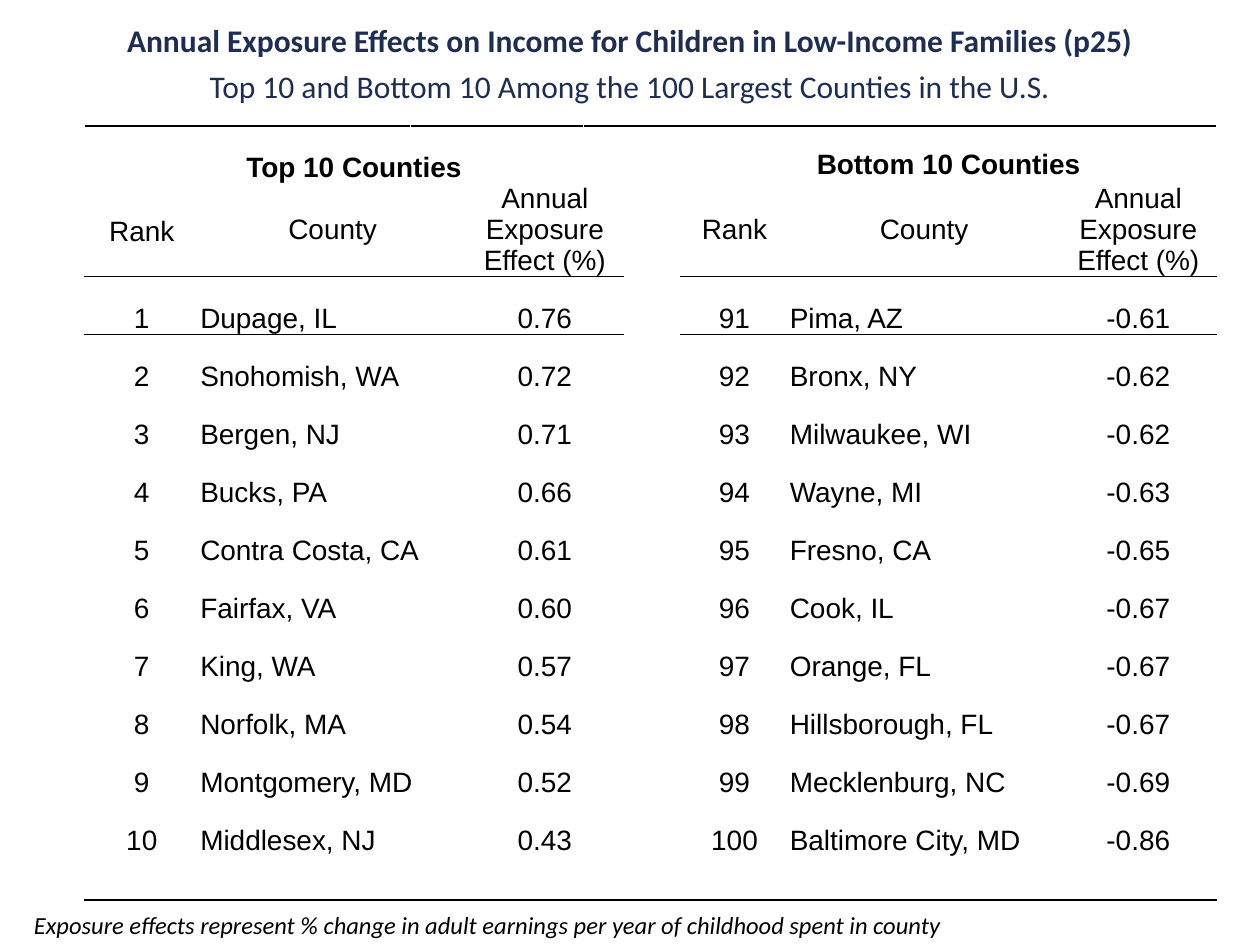
from lxml.etree import SubElement as Sub
from pptx import Presentation
from pptx.dml.color import RGBColor as RGB
from pptx.enum.text import MSO_ANCHOR as Anchor, PP_ALIGN as Align
from pptx.oxml.ns import qn
from pptx.util import Inches, Pt

INK = {"navy": "1E2D53", "black": "000000", "white": "FFFFFF"}
TOP = [
    ("1", "Dupage, IL", "0.76"), ("2", "Snohomish, WA", "0.72"),
    ("3", "Bergen, NJ", "0.71"), ("4", "Bucks, PA", "0.66"),
    ("5", "Contra Costa, CA", "0.61"), ("6", "Fairfax, VA", "0.60"),
    ("7", "King, WA", "0.57"), ("8", "Norfolk, MA", "0.54"),
    ("9", "Montgomery, MD", "0.52"), ("10", "Middlesex, NJ", "0.43"),
]
BOTTOM = [
    ("91", "Pima, AZ", "-0.61"), ("92", "Bronx, NY", "-0.62"),
    ("93", "Milwaukee, WI", "-0.62"), ("94", "Wayne, MI", "-0.63"),
    ("95", "Fresno, CA", "-0.65"), ("96", "Cook, IL", "-0.67"),
    ("97", "Orange, FL", "-0.67"), ("98", "Hillsborough, FL", "-0.67"),
    ("99", "Mecklenburg, NC", "-0.69"), ("100", "Baltimore City, MD", "-0.86"),
]
HEADS = ("Rank", "County", "Annual Exposure Effect (%)")
WIDTHS = [0.91, 1.68, 0.44, 0.93, 0.32, 0.45, 0.86, 2.15, 1.25]
HEIGHTS = [0.17, 0.28, 0.74] + [0.46] * 10 + [0.35]
SLOTS = (0, 1, 3, 6, 7, 8)
GAP = 5
LAST = len(HEIGHTS) - 1


def write(para, text, size, face, ink="black", bold=False, italic=False):
    run = para.add_run()
    run.text = text
    font = run.font
    font.size, font.name, font.bold, font.italic = Pt(size), face, bold, italic
    font.color.rgb = RGB.from_string(INK[ink])


def edge(cell, side, ink, width):
    line = Sub(cell._tc.get_or_add_tcPr(), qn("a:ln" + side), w=str(Pt(width)))
    fill = Sub(line, qn("a:solidFill"))
    Sub(fill, qn("a:srgbClr"), val=INK[ink])


deck = Presentation()
deck.slide_width, deck.slide_height = Inches(10), Inches(7.5)
slide = deck.slides.add_slide(deck.slide_layouts[5])

frame = slide.shapes.add_table(
    len(HEIGHTS), len(WIDTHS), Inches(0.67), Inches(1),
    Inches(sum(WIDTHS)), Inches(sum(HEIGHTS)))
table = frame.table
table.first_row = table.horz_banding = False
style = table._tbl.tblPr.find(qn("a:tableStyleId"))
style.text = "{2D5ABB26-0587-4C30-8999-92F81FD0307C}"
for col, width in zip(table.columns, WIDTHS):
    col.width = Inches(width)
for row, height in zip(table.rows, HEIGHTS):
    row.height = Inches(height)

spans = [(0, 0, 1), (0, 2, 3), (0, 4, 8), (1, 0, 4), (1, 6, 8)]
for r in range(2, len(HEIGHTS)):
    spans += [(r, 1, 2), (r, 3, 4)]
for r, start, end in spans:
    table.cell(r, start).merge(table.cell(r, end))

texts = {(1, 0): "Top 10 Counties", (1, 6): "Bottom 10 Counties"}
rows = [HEADS * 2] + [left + right for left, right in zip(TOP, BOTTOM)]
for r, row in enumerate(rows, 2):
    for c, text in zip(SLOTS, row):
        texts[r, c] = text

for r in range(len(HEIGHTS)):
    for c in range(len(WIDTHS)):
        cell = table.cell(r, c)
        head = r < 3
        cell.margin_left = cell.margin_right = Inches(0.06 if head else 0.01)
        cell.margin_top = Inches(0 if head else 0.01)
        cell.margin_bottom = 0
        cell.vertical_anchor = Anchor.MIDDLE if head else Anchor.BOTTOM
        if r == 0:
            if not cell.is_spanned:
                edge(cell, "L", "white", 1)
                edge(cell, "R", "white", 1)
            edge(cell, "T", "black", 1.5)
        if r == 3 and c != GAP:
            edge(cell, "T", "black", 1)
        if r == 2 and c != GAP:
            edge(cell, "B", "black", 1)
        if r == LAST:
            edge(cell, "B", "black", 1.5)
        cell.fill.solid()
        cell.fill.fore_color.rgb = RGB.from_string(INK["white"])
        para = cell.text_frame.paragraphs[0]
        if (r, c) in texts:
            county = not head and c in (1, 7)
            para.alignment = Align.LEFT if county else Align.CENTER
            if (r, c) in ((1, 0), (2, 0)):
                para.line_spacing = 1.15
            write(para, texts[r, c], 16, "Arial", bold=r == 1)
        else:
            Sub(para._p, qn("a:endParaRPr"), sz="800")

title = slide.shapes.title
title.left, title.top = Inches(0), Inches(0.17)
title.width, title.height = Inches(10), Inches(0.3)
sub = slide.shapes.add_textbox(Inches(0), Inches(0.53), Inches(10), Inches(0.3))
lines = [
    (title, "Annual Exposure Effects on Income for Children in Low-Income Families (p25)", True),
    (sub, "Top 10 and Bottom 10 Among the 100 Largest Counties in the U.S.", False),
]
for box, text, bold in lines:
    body = box.text_frame
    body.word_wrap = True
    body.vertical_anchor = Anchor.TOP
    body.margin_left = body.margin_right = body.margin_top = body.margin_bottom = 0
    para = body.paragraphs[0]
    para.alignment = Align.CENTER
    write(para, text, 18, "Calibri", "navy", bold)

note = slide.shapes.add_textbox(Inches(0.17), Inches(7.17), Inches(8.25), Inches(0.33))
note.text_frame.word_wrap = True
write(note.text_frame.paragraphs[0],
      "Exposure effects represent % change in adult earnings per year of childhood spent in county",
      14, "Calibri", italic=True)

deck.save("out.pptx")
